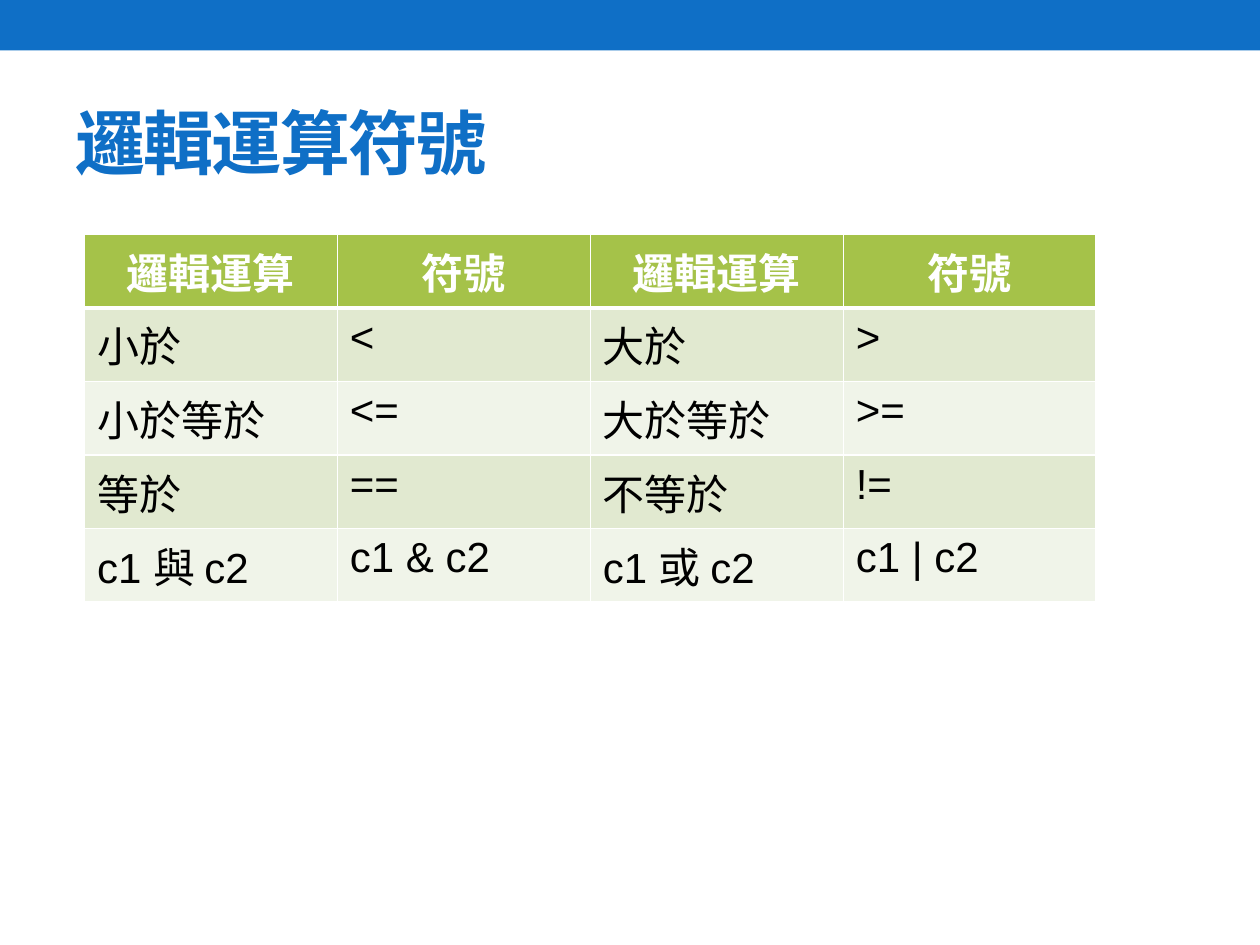
from lxml.etree import SubElement
from pptx import Presentation
from pptx.dml.color import RGBColor
from pptx.enum.shapes import MSO_SHAPE
from pptx.enum.text import MSO_ANCHOR, PP_ALIGN
from pptx.oxml.ns import qn
from pptx.util import Inches, Pt

BLUE = RGBColor(0x0F, 0x6F, 0xC6)
GREEN = RGBColor(0xA5, 0xC2, 0x49)
DARK_BAND = RGBColor(0xE1, 0xE9, 0xD0)
LIGHT_BAND = RGBColor(0xF0, 0xF4, 0xE9)
WHITE = RGBColor(0xFF, 0xFF, 0xFF)
BLACK = RGBColor(0, 0, 0)
FONT = "Arial"

OPERATORS = [
    ("邏輯運算", "符號", "邏輯運算", "符號"),
    ("小於", "<", "大於", ">"),
    ("小於等於", "<=", "大於等於", ">="),
    ("等於", "==", "不等於", "!="),
    ("c1 與 c2", "c1 & c2", "c1 或 c2", "c1 | c2"),
]


def add_run(paragraph, text, size, color, bold):
    run = paragraph.add_run()
    run.text = text
    run.font.name = FONT
    run.font.size = Pt(size)
    run.font.bold = bold
    run.font.color.rgb = color
    return run


def add_top_bar(slide, width):
    bar = slide.shapes.add_shape(MSO_SHAPE.RECTANGLE, 0, 0, width, Inches(0.4))
    bar.shadow.inherit = False
    bar.fill.solid()
    bar.fill.fore_color.rgb = BLUE
    bar.line.fill.background()


def format_title(slide, text):
    title = slide.shapes.title
    title.left, title.top = Inches(0.5), Inches(0.58)
    title.width, title.height = Inches(9), Inches(1.08)
    title.text_frame.vertical_anchor = MSO_ANCHOR.MIDDLE
    paragraph = title.text_frame.paragraphs[0]
    paragraph.alignment = PP_ALIGN.LEFT
    run = add_run(paragraph, text, 40, BLUE, True)
    run.font._element.set("spc", "-100")


def set_borders(cell, widths):
    """Draw white borders; widths maps a side (L, R, T, B) to points."""
    properties = cell._tc.get_or_add_tcPr()
    for position, (side, width) in enumerate(widths.items()):
        line = SubElement(properties, qn(f"a:ln{side}"), w=str(Pt(width)))
        fill = SubElement(line, qn("a:solidFill"))
        SubElement(fill, qn("a:srgbClr"), val=str(WHITE))
        properties.insert(position, line)


def format_cell(cell, text, row):
    header = row == 0
    cell.fill.solid()
    if header:
        cell.fill.fore_color.rgb = GREEN
    else:
        cell.fill.fore_color.rgb = DARK_BAND if row % 2 else LIGHT_BAND
    set_borders(cell, {"L": 1, "R": 1, "T": 3 if row == 1 else 1, "B": 3 if header else 1})
    paragraph = cell.text_frame.paragraphs[0]
    paragraph.alignment = PP_ALIGN.CENTER if header else PP_ALIGN.LEFT
    add_run(paragraph, text, 24, WHITE if header else BLACK, header)


def add_operator_table(slide, rows):
    frame = slide.shapes.add_table(
        len(rows), len(rows[0]), Inches(0.67), Inches(1.86), Inches(8.03), Inches(2.9)
    )
    for row, texts in enumerate(rows):
        for column, text in enumerate(texts):
            format_cell(frame.table.cell(row, column), text, row)


def main():
    presentation = Presentation()
    presentation.slide_width = Inches(10)
    presentation.slide_height = Inches(7.5)
    slide = presentation.slides.add_slide(presentation.slide_layouts[5])
    add_top_bar(slide, presentation.slide_width)
    format_title(slide, "邏輯運算符號")
    add_operator_table(slide, OPERATORS)
    presentation.save("out.pptx")


if __name__ == "__main__":
    main()
